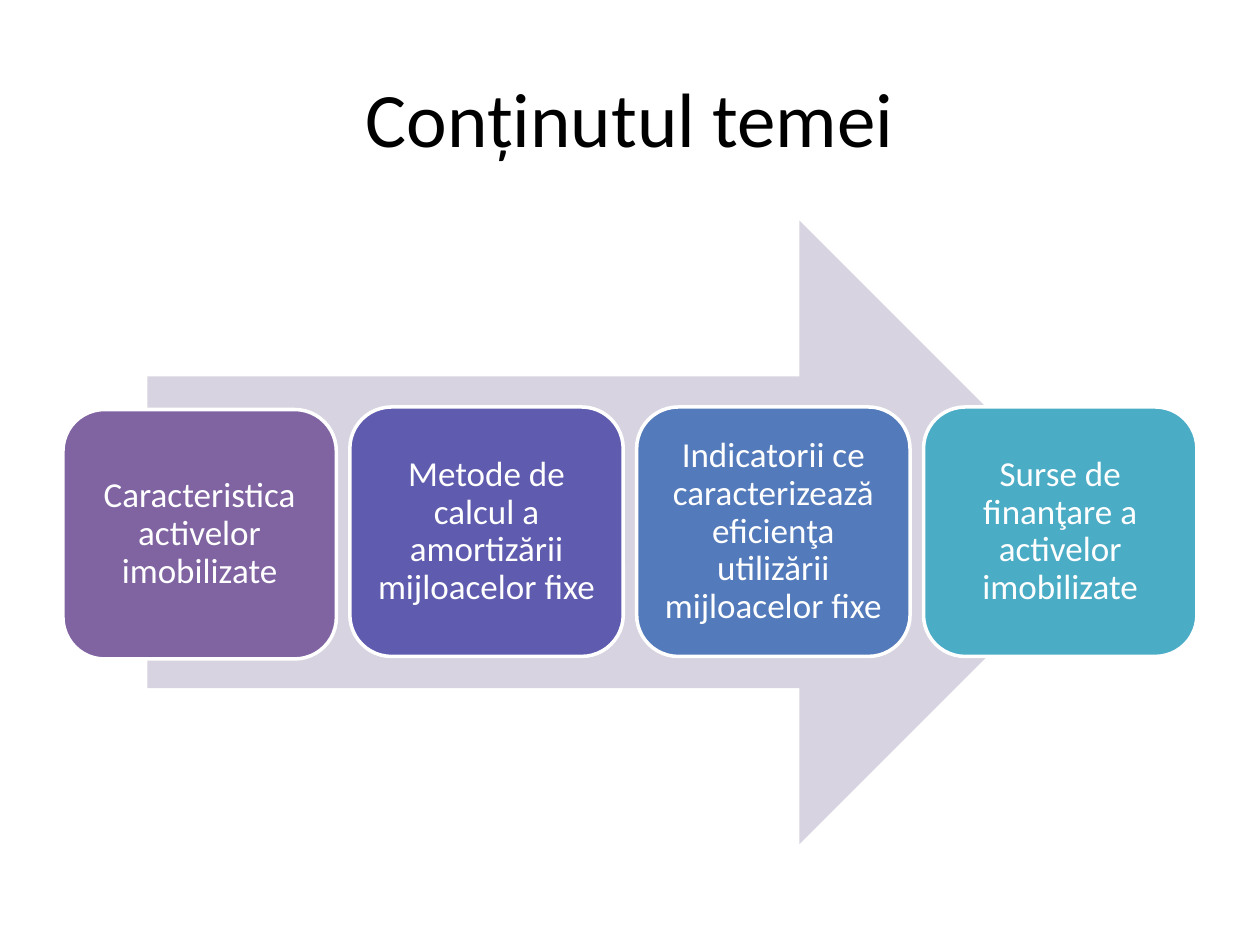
from dataclasses import dataclass

from pptx import Presentation
from pptx.dml.color import RGBColor
from pptx.enum.shapes import MSO_SHAPE as Preset
from pptx.enum.text import MSO_ANCHOR as Anchor, PP_ALIGN as Align
from pptx.util import Inches, Pt


@dataclass(frozen=True)
class Theme:
    font: str = "Calibri"
    ink: str = "000000"
    light: str = "FFFFFF"
    arrow: str = "D8D3E0"
    steps: tuple = ("8064A2", "5F5BAE", "537ABA", "4BACC6")
    title_size: int = 44
    step_size: int = 20
    outline: int = 2


THEME = Theme()
TOPICS = (
    "Caracteristica activelor imobilizate",
    "Metode de calcul a amortizării mijloacelor fixe",
    "Indicatorii ce caracterizează eficienţa utilizării mijloacelor fixe",
    "Surse de finanţare a activelor imobilizate",
)
MARGIN, CONTENT_WIDTH = 0.5, 9
STEP_WIDTH, STEP_HEIGHT = 2.17, 1.98
STEP_TOPS = (3.25, 3.23, 3.23, 3.23)


def write_text(holder, text, *, size, color, spacing=1.0, inset=0.1):
    frame = holder.text_frame
    frame.word_wrap = True
    frame.vertical_anchor = Anchor.MIDDLE
    frame.margin_left = frame.margin_right = Inches(inset)
    frame.margin_top = frame.margin_bottom = Inches(min(inset, 0.08))
    paragraph = frame.paragraphs[0]
    paragraph.alignment = Align.CENTER
    paragraph.line_spacing = spacing
    run = paragraph.add_run()
    run.text = text
    run.font.name = THEME.font
    run.font.size = Pt(size)
    run.font.color.rgb = RGBColor.from_string(color)


def add_title(slide, text):
    title = slide.shapes.add_textbox(
        Inches(MARGIN), Inches(0.3), Inches(CONTENT_WIDTH), Inches(1.25)
    )
    write_text(title, text, size=THEME.title_size, color=THEME.ink)


def add_block(slide, preset, left, top, width, height, fill, outline=None):
    block = slide.shapes.add_shape(
        preset, Inches(left), Inches(top), Inches(width), Inches(height)
    )
    block.shadow.inherit = False
    block.fill.solid()
    block.fill.fore_color.rgb = RGBColor.from_string(fill)
    if outline:
        block.line.color.rgb = RGBColor.from_string(outline)
        block.line.width = Pt(THEME.outline)
    else:
        block.line.fill.background()
    return block


def add_steps(slide):
    pitch = (CONTENT_WIDTH - STEP_WIDTH) / (len(TOPICS) - 1)
    for index, (topic, color, top) in enumerate(zip(TOPICS, THEME.steps, STEP_TOPS)):
        step = add_block(
            slide, Preset.ROUNDED_RECTANGLE, MARGIN + index * pitch, top,
            STEP_WIDTH, STEP_HEIGHT, color, outline=THEME.light,
        )
        write_text(step, topic, size=THEME.step_size, color=THEME.light,
                   spacing=0.9, inset=0.08)


def main():
    deck = Presentation()
    deck.slide_width, deck.slide_height = Inches(10), Inches(7.5)
    slide = deck.slides.add_slide(deck.slide_layouts[6])
    add_title(slide, "Conținutul temei")
    add_block(slide, Preset.RIGHT_ARROW, 1.17, 1.75, 7.65, 4.95, THEME.arrow)
    add_steps(slide)
    deck.save("out.pptx")


if __name__ == "__main__":
    main()
